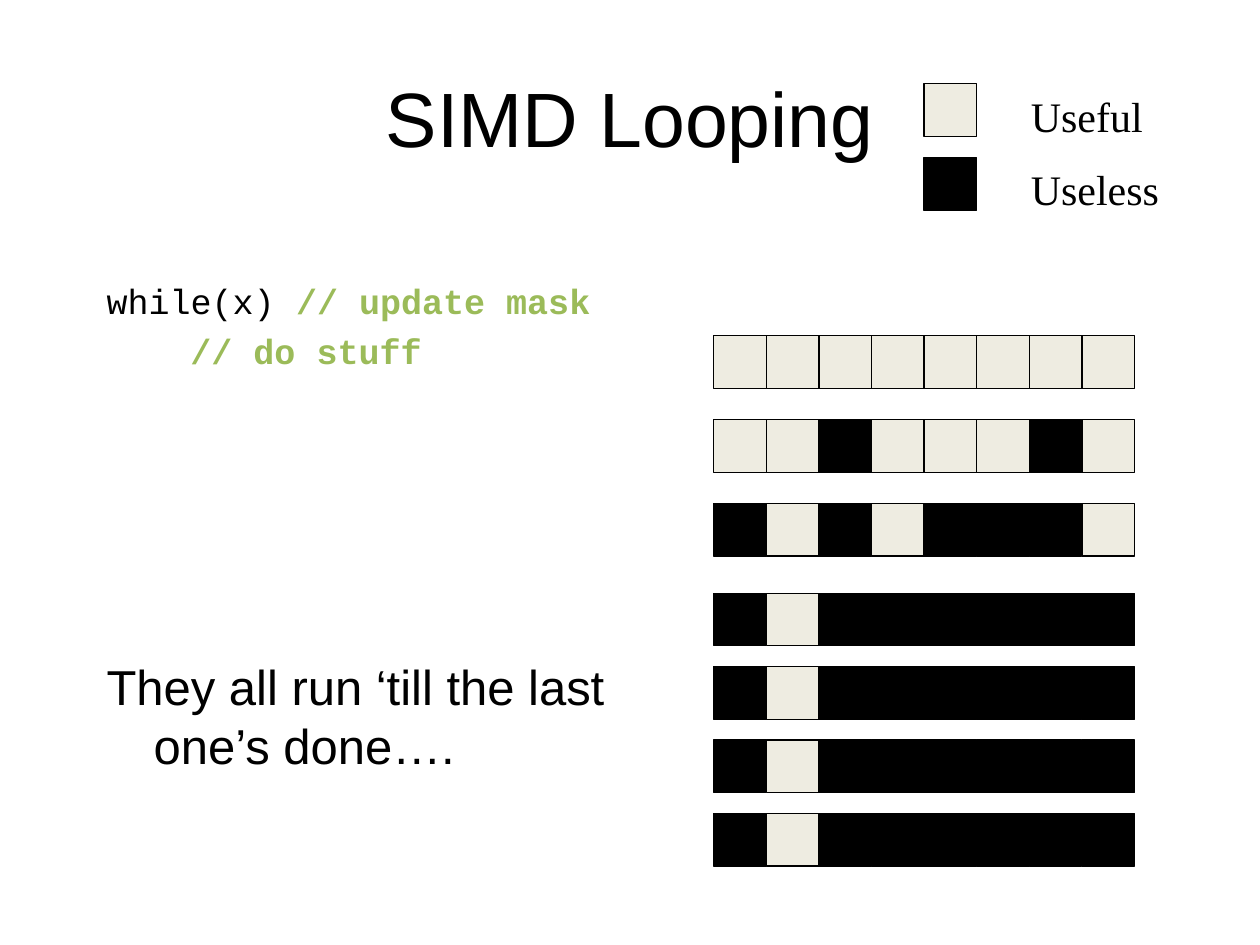
from pptx import Presentation, util as u
from pptx.dml import color
from pptx.enum import shapes, text

BLACK, CREAM, GREEN = "000000", "EEECE1", "9BBB59"
SIDE = 1.06
LEFT = 14.39


def paint(part, tone):
    part.fill.solid()
    part.fill.fore_color.rgb = color.RGBColor.from_string(tone)


def write(par, words, font="Arial", size=28, tone=BLACK, bold=False):
    run = par.add_run()
    run.text = words
    run.font.name = font
    run.font.size = u.Pt(size)
    run.font.bold = bold
    paint(run.font, tone)


class Deck:
    """Hold the style and the current slide."""

    def __init__(self):
        self.file = Presentation()
        self.file.slide_width, self.file.slide_height = u.Cm(25.4), u.Cm(19.05)
        self.slide = self.file.slides.add_slide(self.file.slide_layouts[6])

    def frame(self, x, y, wide, high, anchor=text.MSO_ANCHOR.TOP):
        box = self.slide.shapes.add_textbox(*map(u.Cm, (x, y, wide, high)))
        box.text_frame.word_wrap = True
        box.text_frame.vertical_anchor = anchor
        return box.text_frame

    def indent(self, par, margin, first, before):
        props = par._p.get_or_add_pPr()
        props.set("marL", str(u.Cm(margin)))
        props.set("indent", str(u.Cm(first)))
        par.space_before = u.Pt(before)
        return par

    def cell(self, x, y, tone, host=None):
        host = host or self.slide.shapes
        box = host.add_shape(shapes.MSO_SHAPE.RECTANGLE,
                             *map(u.Cm, (x, y, SIDE, SIDE)))
        box.shadow.inherit = False
        paint(box, tone)
        paint(box.line, BLACK)
        box.line.width = u.Pt(0.75)

    def row(self, y, mask):
        group = self.slide.shapes.add_group_shape()
        for lane, bit in enumerate(mask):
            tone = CREAM if bit == "1" else BLACK
            self.cell(LEFT + lane * SIDE, y, tone, group.shapes)

    def label(self, y, words, tone):
        self.cell(18.63, y, tone)
        par = self.frame(20.53, y, 3.18, 1.27).paragraphs[0]
        par.space_before = u.Pt(3)
        write(par, words, font="Times New Roman", size=24)


def main():
    deck = Deck()
    title = deck.frame(1.27, 0.76, 22.86, 3.18, text.MSO_ANCHOR.MIDDLE).paragraphs[0]
    title.alignment = text.PP_ALIGN.CENTER
    write(title, "SIMD Looping", size=44)

    body = deck.frame(1.9, 5.5, 11.64, 11.43)
    code = {"font": "Courier New", "size": 20}
    note = {**code, "tone": GREEN, "bold": True}
    loop = deck.indent(body.paragraphs[0], 0.95, -0.95, 4)
    write(loop, "while(x) ", **code)
    write(loop, "// update mask", **note)
    write(deck.indent(body.add_paragraph(), 1.69, 0, 5), "// do stuff", **note)
    last = deck.indent(body.add_paragraph(), 0.95, -0.95, 163)
    write(last, "They all run ‘till the last one’s done….")

    for step, mask in enumerate(("11111111", "11011101", "01010001")):
        deck.row(6.77 + step * 1.69, mask)
    for step in range(4):
        deck.row(11.96 + step * 1.48, "01000000")

    deck.label(1.69, "Useful", CREAM)
    deck.label(3.18, "Useless", BLACK)
    deck.file.save("out.pptx")


if __name__ == "__main__":
    main()
